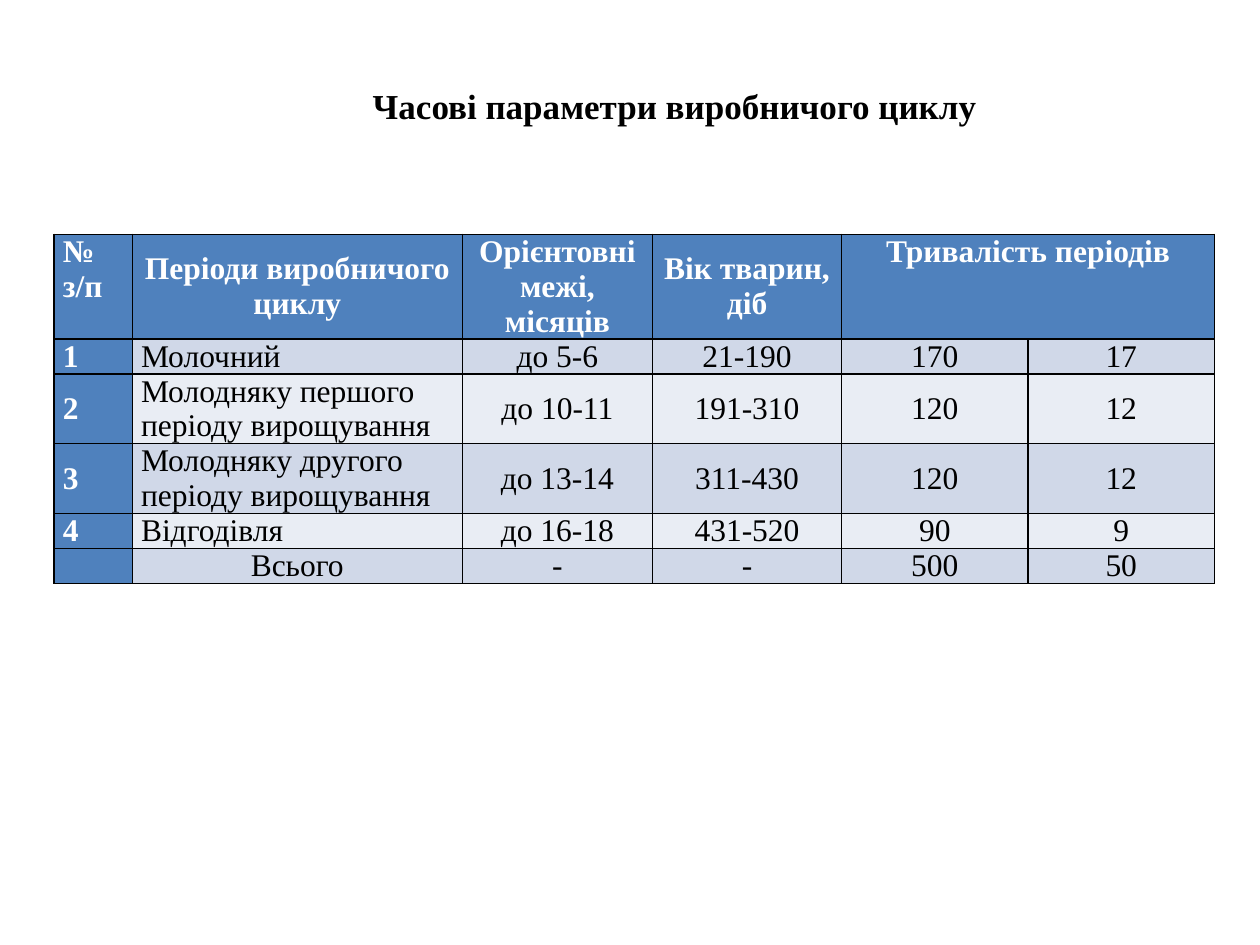
import lxml.etree
import pptx
import pptx.dml.color
import pptx.enum.text
import pptx.oxml.ns
import pptx.util

INCH = pptx.util.Inches
ALIGN = pptx.enum.text.PP_ALIGN
ANCHOR = pptx.enum.text.MSO_ANCHOR
TAG = pptx.oxml.ns.qn
FONT = "Times New Roman"
BLUE, WHITE, BLACK = "4F81BD", "FFFFFF", "000000"
BANDS = ("E9EDF4", "D0D8E8")


def color(value):
    return pptx.dml.color.RGBColor.from_string(value)


def write(frame, text, align, size, ink, bold):
    """Fill a text frame, one paragraph for each line of the text."""
    frame.text = text
    for para in frame.paragraphs:
        para.alignment = align
        for span in para.runs:
            values = {"name": FONT, "size": pptx.util.Pt(size), "bold": bold}
            for name, value in values.items():
                setattr(span.font, name, value)
            span.font.color.rgb = color(ink)


deck = pptx.Presentation()
deck.slide_width, deck.slide_height = INCH(10), INCH(7.5)
page = deck.slides.add_slide(deck.slide_layouts[6])

rows = [
    ["№ з/п", "Періоди виробничого циклу", "Орієнтовні межі, місяців",
     "Вік тварин,\nдіб", "Тривалість періодів", ""],
    ["1", "Молочний", "до 5-6", "21-190", "170", "17"],
    ["2", "Молодняку першого періоду вирощування", "до 10-11", "191-310", "120", "12"],
    ["3", "Молодняку другого періоду вирощування", "до 13-14", "311-430", "120", "12"],
    ["4", "Відгодівля", "до 16-18", "431-520", "90", "9"],
    ["", "Всього", "-", "-", "500", "50"],
]
widths = [0.62, 2.62, 1.51, 1.5, 1.48, 1.48]
line_counts = [3, 1, 2, 2, 1, 1]
line_height = 0.277
last = len(rows) - 1

table = page.shapes.add_table(
    len(rows), len(widths), INCH(0.43), INCH(1.86),
    INCH(sum(widths)), INCH(sum(line_counts) * line_height)).table
for column, width in zip(table.columns, widths):
    column.width = INCH(width)
for row, count in zip(table.rows, line_counts):
    row.height = INCH(count * line_height)
table.cell(0, 4).merge(table.cell(0, 5))

for r, texts in enumerate(rows):
    for c, text in enumerate(texts):
        cell = table.cell(r, c)
        heading = r == 0 or c == 0
        top = r == 0 and c in (0, 4)
        left = c == 0 or (c == 1 and 0 < r < last)
        layout = {
            "margin_left": INCH(0.07), "margin_right": INCH(0.07),
            "margin_top": 0, "margin_bottom": 0,
            "vertical_anchor": ANCHOR.TOP if top else ANCHOR.MIDDLE,
        }
        for name, value in layout.items():
            setattr(cell, name, value)
        write(cell.text_frame, text, ALIGN.LEFT if left else ALIGN.CENTER,
              18, WHITE if heading else BLACK, heading)
        if not text:
            # A smaller end mark keeps an empty cell from stretching its row
            lxml.etree.SubElement(
                cell.text_frame.paragraphs[0]._p, TAG("a:endParaRPr"), sz="1600")

        cell.fill.solid()
        cell.fill.fore_color.rgb = color(BLUE if heading else BANDS[r % 2])
        properties = cell._tc.get_or_add_tcPr()
        for position, side in enumerate(("a:lnL", "a:lnR", "a:lnT", "a:lnB")):
            border = lxml.etree.Element(TAG(side), w=str(pptx.util.Pt(1)))
            fill = lxml.etree.SubElement(border, TAG("a:solidFill"))
            lxml.etree.SubElement(fill, TAG("a:srgbClr"), val=BLACK)
            properties.insert(position, border)

box = page.shapes.add_textbox(INCH(2.84), INCH(0.62), INCH(5.03), INCH(0.77))
box.text_frame.word_wrap = False
box.text_frame.vertical_anchor = ANCHOR.TOP
write(box.text_frame, "Часові параметри виробничого циклу", ALIGN.CENTER, 20, BLACK, True)

deck.save("out.pptx")
